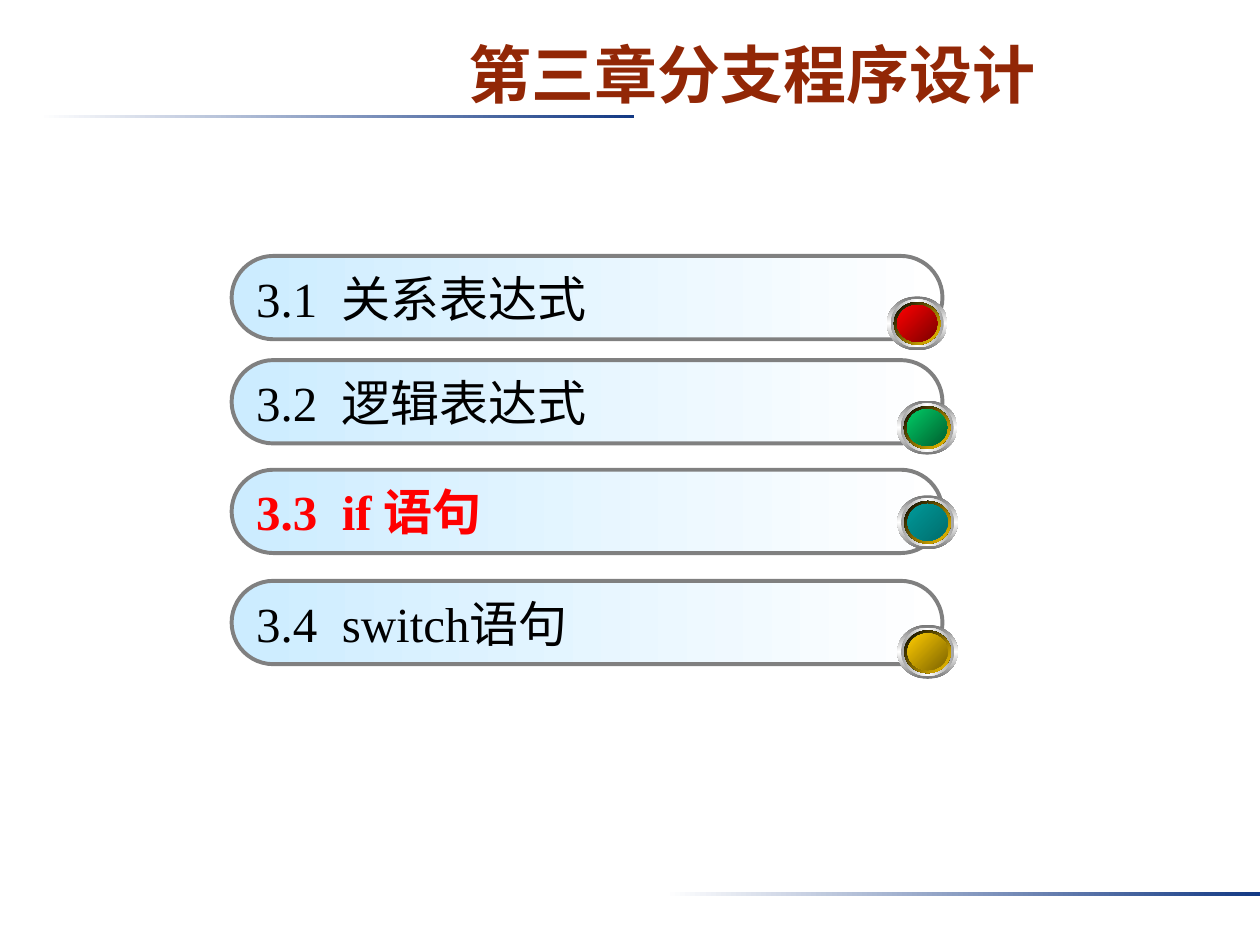
from lxml import etree
from pptx import Presentation
from pptx.dml.color import RGBColor
from pptx.enum import shapes, text
from pptx.oxml.ns import qn
from pptx.util import Cm, Pt

TITLE = "第三章分支程序设计"
# label, text colour, bold, pill top, bead centre (x, y), bead gradient
SECTIONS = [
    ("3.4  switch语句", "000000", False, 11.71, (18.7, 13.14), ("FFCC00", "7C6300")),
    ("3.3  if 语句", "FF0000", True, 9.47, (18.7, 10.53), ("009999", "006D6D")),
    ("3.2  逻辑表达式", "000000", False, 7.26, (18.69, 8.62), ("00CC66", "005E2F")),
    ("3.1  关系表达式", "000000", False, 5.16, (18.49, 6.52), ("FF0000", "7C0000")),
]
# width, height, gradient colours, angle; outermost first
BEAD_RINGS = [
    (1.22, 1.09, ("767676", "FFFFFF", "767676"), 90),
    (1.07, 0.97, ("A2A2A2", "FFFFFF", "A2A2A2"), 0),
    (0.94, 0.86, ("FFFFFF", "009999", "FFFFFF"), 45),
    (0.94, 0.86, ("000000", "FFCC00"), 45),
    (0.81, 0.74, ("007575", "009999", "007575"), 315),
]
CORE_SIZE = (0.81, 0.74)
RULES = [(0.79, 2.31), (13.41, 17.98)]
PILL_LEFT, PILL_WIDTH, PILL_HEIGHT = 4.67, 14.33, 1.68


def color(value):
    return RGBColor.from_string(value)


def set_gradient(shape, colors, angle):
    """Spread the colours evenly, with the angle in degrees clockwise."""
    shape.fill.gradient()
    gradient = shape._element.spPr.find(qn("a:gradFill"))
    stops = gradient.find(qn("a:gsLst"))
    for stop in list(stops):
        stops.remove(stop)
    for index, value in enumerate(colors):
        position = index * 100000 // (len(colors) - 1)
        stop = etree.SubElement(stops, qn("a:gs"), pos=str(position))
        etree.SubElement(stop, qn("a:srgbClr"), val=value)
    gradient.find(qn("a:lin")).set("ang", str(angle * 60000))


def add_gradient_shape(parent, kind, left, top, width, height, colors, angle=0):
    shape = parent.shapes.add_shape(kind, Cm(left), Cm(top), Cm(width), Cm(height))
    shape.shadow.inherit = False
    shape.line.fill.background()
    set_gradient(shape, colors, angle)
    return shape


def add_pill(group, label, text_color, bold, top):
    pill = add_gradient_shape(group, shapes.MSO_SHAPE.ROUNDED_RECTANGLE, PILL_LEFT, top,
                              PILL_WIDTH, PILL_HEIGHT, ("CCECFF", "FFFFFF"))
    pill.adjustments[0] = 0.5
    pill.line.color.rgb = color("808080")
    pill.line.width = Pt(2.25)
    pill.text_frame.vertical_anchor = text.MSO_ANCHOR.MIDDLE
    para = pill.text_frame.paragraphs[0]
    para.text = label
    para.alignment = text.PP_ALIGN.LEFT
    para.font.name = "Times New Roman"
    para.font.size = Pt(28)
    para.font.bold = bold
    para.font.color.rgb = color(text_color)


def add_bead(group, center, core_colors):
    x, y = center
    for width, height, colors, angle in BEAD_RINGS + [(*CORE_SIZE, core_colors, 45)]:
        add_gradient_shape(group, shapes.MSO_SHAPE.OVAL, x - width / 2, y - height / 2,
                           width, height, colors, angle)


def add_title(page):
    title = page.shapes.title
    title.left, title.top, title.width, title.height = Cm(4.9), Cm(0.51), Cm(20.5), Cm(1.9)
    frame = title.text_frame
    frame.margin_top, frame.margin_bottom = Cm(0.15), Cm(0.13)
    frame.vertical_anchor = text.MSO_ANCHOR.MIDDLE
    para = frame.paragraphs[0]
    para.text = TITLE
    para.alignment = text.PP_ALIGN.CENTER
    para.font.name = "Arial"
    para.font.size = Pt(36)
    para.font.bold = True
    para.font.color.rgb = color("922706")


def main():
    deck = Presentation()
    deck.slide_width, deck.slide_height = Cm(25.4), Cm(19.05)
    page = deck.slides.add_slide(deck.slide_layouts[5])
    add_title(page)
    for left, top in RULES:
        add_gradient_shape(page, shapes.MSO_SHAPE.RECTANGLE, left, top, 11.99, 0.08,
                           ("FFFFFF", "133984"))
    for label, text_color, bold, top, center, core_colors in SECTIONS:
        group = page.shapes.add_group_shape()
        add_pill(group, label, text_color, bold, top)
        add_bead(group, center, core_colors)
    deck.save("out.pptx")


if __name__ == "__main__":
    main()
